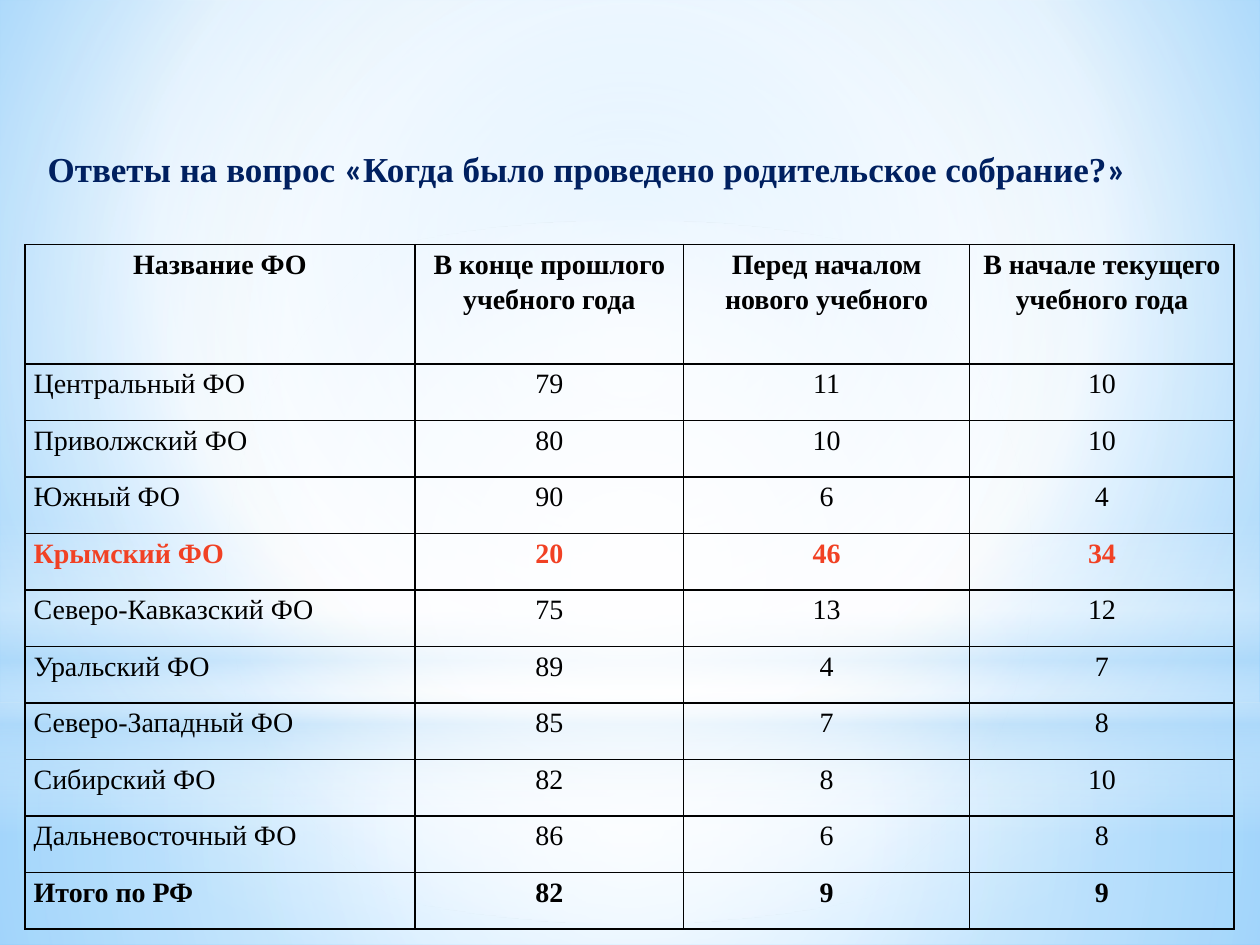
"""Build a slide with a table of survey answers by federal district."""
from pptx import Presentation, oxml
from pptx import util as u
from pptx.dml.color import RGBColor
from pptx.enum import shapes, text

COLOURS = {"white": "FFFFFF", "sky": "9ED5FF", "azure": "5BB9FF", "mist": "B4DCFA",
           "black": "000000", "red": "F14124", "navy": "002060"}
NAMESPACE = 'xmlns:a="http://schemas.openxmlformats.org/drawingml/2006/main"'
FONT = "Times New Roman"
CENTRE = (50, 50, 50, 50)


def paint_gradient(fill, element, stops, focus=None):
    """Fill with stops of (position, colour, opacity), radial if a focus is given."""
    marks = "".join(
        f'<a:gs pos="{place * 1000}"><a:srgbClr val="{COLOURS[name]}">'
        f'<a:alpha val="{opacity * 1000}"/></a:srgbClr></a:gs>'
        for place, name, opacity in stops)
    direction = '<a:lin ang="5400000" scaled="0"/>'
    if focus:
        edges = " ".join(f'{side}="{value * 1000}"' for side, value in zip("ltrb", focus))
        direction = f'<a:path path="circle"><a:fillToRect {edges}/></a:path>'
    fill.gradient()
    old = element.xpath(".//a:gradFill")[0]
    new = oxml.parse_xml(f'<a:gradFill {NAMESPACE} rotWithShape="1">'
                         f'<a:gsLst>{marks}</a:gsLst>{direction}</a:gradFill>')
    old.getparent().replace(old, new)


def style_span(span, size, colour, bold, font=FONT):
    """Set the font of one run."""
    span.font.name = font
    span.font.size = u.Pt(size)
    span.font.bold = bold
    span.font.color.rgb = RGBColor.from_string(COLOURS[colour])


deck = Presentation()
deck.slide_width, deck.slide_height = u.Cm(25.4), u.Cm(19.05)
page = deck.slides.add_slide(deck.slide_layouts[6])
paint_gradient(page.background.fill, page.element,
               [(0, "sky", 100), (60, "white", 100), (100, "azure", 100)], (20, 10, 20, 60))

rectangle, oval = shapes.MSO_SHAPE.RECTANGLE, shapes.MSO_SHAPE.OVAL
glows = [
    (rectangle, 14.17, 4.88, [(0, "white", 91), (37, "white", 76), (100, "mist", 79)], CENTRE),
    (rectangle, 0, 14.17, [(0, "white", 89), (48, "white", 62), (100, "mist", 79)], CENTRE),
    (rectangle, 10.46, 6.35, [(0, "white", 0), (29, "white", 30), (45, "mist", 40),
                              (55, "white", 26), (65, "mist", 60), (100, "white", 0)], None),
    (oval, 4.45, 14.17, [(0, "white", 100), (56, "white", 0)], CENTRE),
]
for kind, top, height, stops, focus in glows:
    glow = page.shapes.add_shape(kind, 0, u.Cm(top), deck.slide_width, u.Cm(height))
    glow.shadow.inherit = False
    glow.line.fill.background()
    paint_gradient(glow.fill, glow.element, stops, focus)

rows = [
    ("Название ФО", "В конце прошлого учебного года",
     "Перед началом нового учебного", "В начале текущего учебного года"),
    ("Центральный ФО", 79, 11, 10),
    ("Приволжский ФО", 80, 10, 10),
    ("Южный ФО", 90, 6, 4),
    ("Крымский ФО", 20, 46, 34),
    ("Северо-Кавказский ФО", 75, 13, 12),
    ("Уральский ФО", 89, 4, 7),
    ("Северо-Западный ФО", 85, 7, 8),
    ("Сибирский ФО", 82, 8, 10),
    ("Дальневосточный ФО", 86, 6, 8),
    ("Итого по РФ", 82, 9, 9),
]
widths = [7.87, 5.41, 5.77, 5.33]
heights = [2.41] + [1.14] * (len(rows) - 1)
table = page.shapes.add_table(len(rows), len(widths), u.Cm(0.5), u.Cm(4.93),
                              u.Cm(sum(widths)), u.Cm(sum(heights))).table
table.first_row = table.horz_banding = False
for column, width in zip(table.columns, widths):
    column.width = u.Cm(width)
for row, height in zip(table.rows, heights):
    row.height = u.Cm(height)

for row_index, values in enumerate(rows):
    highlighted = values[0] == "Крымский ФО"
    bold = highlighted or row_index in (0, len(rows) - 1)
    for column_index, value in enumerate(values):
        cell = table.cell(row_index, column_index)
        cell.fill.background()
        cell.margin_left = cell.margin_right = u.Cm(0.18)
        cell.margin_top = cell.margin_bottom = 0
        cell.text_frame.text = str(value)
        para = cell.text_frame.paragraphs[0]
        para.line_spacing = 1.15
        is_label = row_index > 0 and column_index == 0
        para.alignment = text.PP_ALIGN.JUSTIFY if is_label else text.PP_ALIGN.CENTER
        style_span(para.runs[0], 16, "red" if highlighted else "black", bold)
        properties = cell._tc.get_or_add_tcPr()
        for place, side in enumerate("LRTB"):
            properties.insert(place, oxml.parse_xml(
                f'<a:ln{side} {NAMESPACE} w="12700"><a:solidFill>'
                f'<a:srgbClr val="{COLOURS["black"]}"/></a:solidFill></a:ln{side}>'))

box = page.shapes.add_textbox(u.Cm(0.71), u.Cm(2.84), u.Cm(24), u.Cm(1.12))
box.text_frame.word_wrap = True
box.text_frame.vertical_anchor = text.MSO_ANCHOR.MIDDLE
para = box.text_frame.paragraphs[0]
for words, font in [("Ответы на вопрос ", FONT), ("«", "Calibri"),
                    ("Когда было проведено родительское собрание?", FONT), ("»", "Calibri")]:
    span = para.add_run()
    span.text = words
    style_span(span, 20, "navy", True, font)

deck.save("out.pptx")
